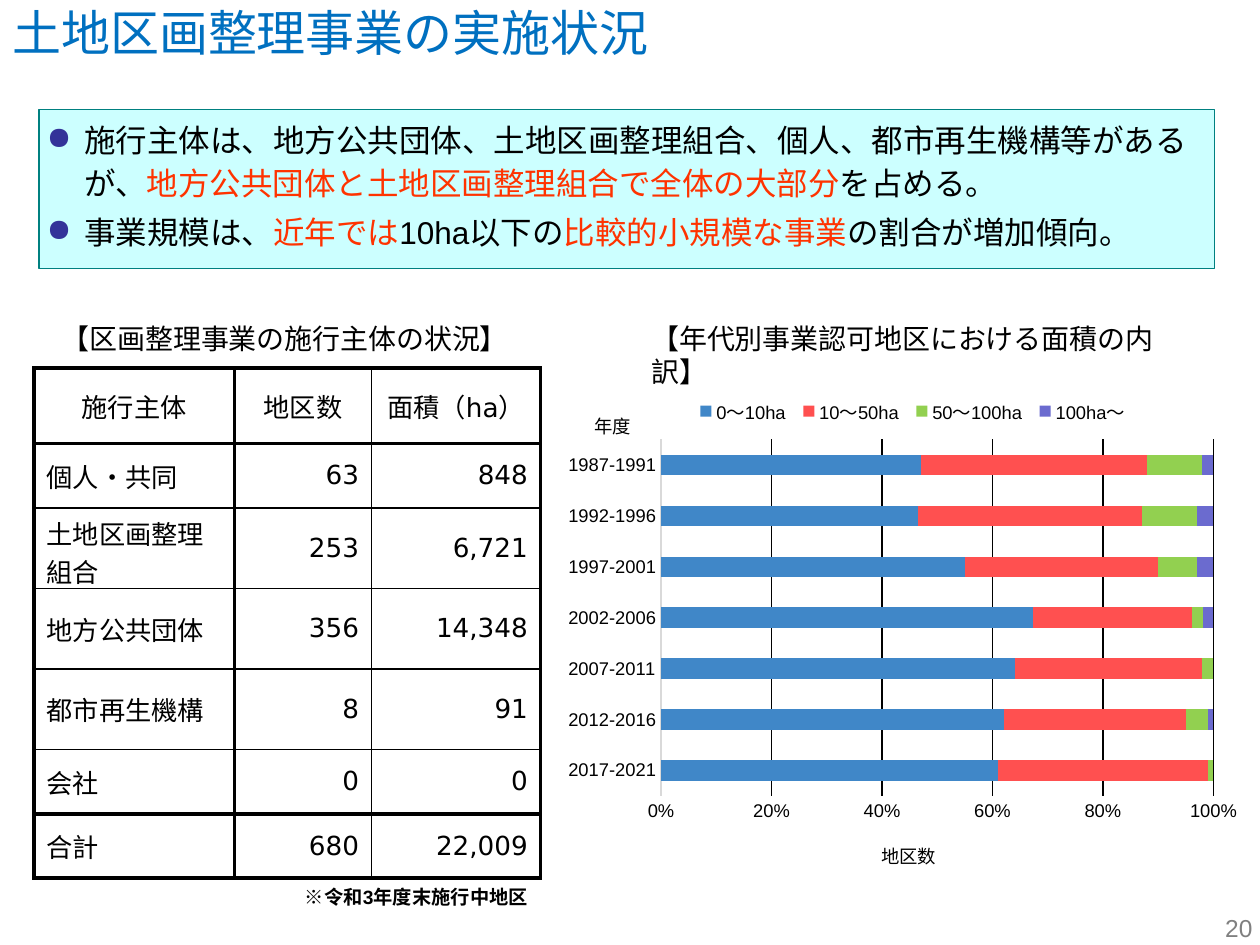
from dataclasses import dataclass
from typing import Optional

from lxml.etree import SubElement
from pptx import Presentation
from pptx.chart.data import CategoryChartData
from pptx.dml.color import RGBColor
from pptx.enum.chart import XL_CHART_TYPE as ChartType, XL_LEGEND_POSITION as LegendPosition
from pptx.enum.chart import XL_TICK_MARK as TickMark
from pptx.enum.shapes import MSO_SHAPE as Shape
from pptx.enum.text import MSO_ANCHOR as Anchor, MSO_AUTO_SIZE as AutoSize, PP_ALIGN as Align
from pptx.oxml import parse_xml
from pptx.oxml.ns import nsdecls, qn
from pptx.util import Inches, Pt

BLACK = RGBColor(0x00, 0x00, 0x00)
WHITE = RGBColor(0xFF, 0xFF, 0xFF)
TITLE_BLUE = RGBColor(0x00, 0x70, 0xC0)
ACCENT_RED = RGBColor(0xFF, 0x33, 0x00)
BULLET_BLUE = RGBColor(0x33, 0x33, 0x99)
PANEL_FILL = RGBColor(0xCC, 0xFF, 0xFF)
PANEL_LINE = RGBColor(0x00, 0x80, 0x80)
PAGE_GREY = RGBColor(0x80, 0x80, 0x80)
AXIS_GREY = RGBColor(0xD9, 0xD9, 0xD9)
LATIN, JAPANESE, TABLE_FONT = "Arial", "Noto Sans CJK JP", "DejaVu Sans"


@dataclass(frozen=True)
class Label:
    text: str
    left: float
    top: float
    width: float
    height: float
    size: float
    color: RGBColor = BLACK
    font: str = LATIN
    align: Align = Align.LEFT
    anchor: Anchor = Anchor.TOP
    bold: bool = False
    fill: Optional[RGBColor] = None
    grow: bool = False


@dataclass(frozen=True)
class Series:
    name: str
    values: tuple
    color: RGBColor


TITLE = Label("土地区画整理事業の実施状況", 0, -0.03, 7.27, 0.57, 28, TITLE_BLUE, JAPANESE,
              anchor=Anchor.MIDDLE)
TABLE_CAPTION = Label("【区画整理事業の施行主体の状況】", 0.39, 2.5, 3.78, 0.37, 16, fill=WHITE, grow=True)
CHART_CAPTION = Label("【年代別事業認可地区における面積の内訳】", 5.07, 2.5, 4.41, 0.37, 16, fill=WHITE, grow=True)
FOOTNOTE = Label("※令和3年度末施行中地区", 1.67, 6.98, 2.62, 0.29, 11, align=Align.RIGHT, bold=True, grow=True)
PAGE_NUMBER = Label("20", 7.71, 7.01, 2.33, 0.52, 14, PAGE_GREY, align=Align.RIGHT, anchor=Anchor.BOTTOM)

POINTS = (
    (("施行主体は、地方公共団体、土地区画整理組合、個人、都市再生機構等があるが、", BLACK),
     ("地方公共団体と土地区画整理組合で全体の大部分", ACCENT_RED), ("を占める。", BLACK)),
    (("事業規模は、", BLACK), ("近年では", ACCENT_RED), ("10ha以下の", BLACK),
     ("比較的小規模な事業", ACCENT_RED), ("の割合が増加傾向。", BLACK)),
)

ROWS = (
    ("施行主体", "地区数", "面積（ha）"),
    ("個人・共同", "63", "848"),
    ("土地区画整理組合", "253", "6,721"),
    ("地方公共団体", "356", "14,348"),
    ("都市再生機構", "8", "91"),
    ("会社", "0", "0"),
    ("合計", "680", "22,009"),
)
COLUMN_WIDTHS = (1.59, 1.09, 1.34)
ROW_HEIGHTS = (0.51, 0.51, 0.64, 0.64, 0.64, 0.51, 0.51)
THICK_COLUMN_EDGES = {0, 1, 3}
THICK_ROW_EDGES = {0, 1, 6, 7}

PERIODS = ("2017-2021", "2012-2016", "2007-2011", "2002-2006", "1997-2001", "1992-1996", "1987-1991")
AREA_BANDS = (
    Series("0～10ha", (61, 62, 64, 68, 55, 47, 47), RGBColor(0x40, 0x87, 0xC8)),
    Series("10～50ha", (38, 33, 34, 29, 35, 41, 41), RGBColor(0xFF, 0x50, 0x50)),
    Series("50～100ha", (1, 4, 2, 2, 7, 10, 10), RGBColor(0x92, 0xD0, 0x50)),
    Series("100ha～", (0, 1, 0, 2, 3, 3, 2), RGBColor(0x6B, 0x6B, 0xCF)),
)


def style_font(font, size: float, color: RGBColor, name: str, bold: bool = False) -> None:
    font.size, font.name, font.bold = Pt(size), name, bold
    font.color.rgb = color


def style_paragraph(para, size: float, color: RGBColor, name: str, bold: bool = False) -> None:
    style_font(para.font, size, color, name, bold)
    if name != TABLE_FONT:
        SubElement(para.font._element, qn("a:ea"), typeface=name)


def add_label(page, label: Label) -> None:
    frame = tuple(Inches(n) for n in (label.left, label.top, label.width, label.height))
    if label.fill is None:
        box = page.shapes.add_textbox(*frame)
    else:
        box = page.shapes.add_shape(Shape.RECTANGLE, *frame)
        box.shadow.inherit = False
        box.fill.solid()
        box.fill.fore_color.rgb = label.fill
        box.line.fill.background()
    text = box.text_frame
    text.word_wrap = True
    text.vertical_anchor = label.anchor
    text.auto_size = AutoSize.SHAPE_TO_FIT_TEXT if label.grow else AutoSize.NONE
    para = text.paragraphs[0]
    para.text, para.alignment = label.text, label.align
    style_paragraph(para, label.size, label.color, label.font, label.bold)


def add_summary(page) -> None:
    box = page.shapes.add_shape(Shape.RECTANGLE, Inches(0.31), Inches(0.87), Inches(9.33), Inches(1.26))
    box.shadow.inherit = False
    box.fill.solid()
    box.fill.fore_color.rgb = PANEL_FILL
    box.line.color.rgb, box.line.width = PANEL_LINE, Pt(0.75)
    text = box.text_frame
    text.word_wrap, text.vertical_anchor = True, Anchor.TOP
    text.margin_left, text.margin_right = Inches(0.06), Inches(0.02)
    text.margin_top = text.margin_bottom = Inches(0.05)
    for index, spans in enumerate(POINTS):
        para = text.add_paragraph() if index else text.paragraphs[0]
        para.alignment, para.line_spacing = Align.LEFT, 1.14
        if index:
            para.space_before = Pt(3.6)
        properties = para._p.get_or_add_pPr()
        properties.set("marL", str(Inches(0.3)))
        properties.set("indent", str(-Inches(0.3)))
        SubElement(SubElement(properties, qn("a:buClr")), qn("a:srgbClr"), val=str(BULLET_BLUE))
        SubElement(properties, qn("a:buChar"), char="●")
        style_paragraph(para, 18, BLACK, LATIN)
        for words, color in spans:
            span = para.add_run()
            span.text = words
            span.font.color.rgb = color


def set_borders(cell, row: int, column: int) -> None:
    edges = (("L", column in THICK_COLUMN_EDGES), ("R", column + 1 in THICK_COLUMN_EDGES),
             ("T", row in THICK_ROW_EDGES), ("B", row + 1 in THICK_ROW_EDGES))
    properties = cell._tc.get_or_add_tcPr()
    for index, (side, thick) in enumerate(edges):
        properties.insert(index, parse_xml(
            f'<a:ln{side} {nsdecls("a")} w="{Pt(2.25 if thick else 1)}"><a:solidFill>'
            f'<a:srgbClr val="{BLACK}"/></a:solidFill></a:ln{side}>'))


def add_operator_table(page) -> None:
    table = page.shapes.add_table(len(ROWS), len(COLUMN_WIDTHS), Inches(0.27), Inches(2.92),
                                  Inches(sum(COLUMN_WIDTHS)), Inches(sum(ROW_HEIGHTS))).table
    table.first_row = table.horz_banding = False
    for column, width in zip(table.columns, COLUMN_WIDTHS):
        column.width = Inches(width)
    for r, (height, values) in enumerate(zip(ROW_HEIGHTS, ROWS)):
        table.rows[r].height = Inches(height)
        for c, value in enumerate(values):
            cell = table.cell(r, c)
            cell.text, cell.vertical_anchor = value, Anchor.MIDDLE
            cell.fill.background()
            set_borders(cell, r, c)
            para = cell.text_frame.paragraphs[0]
            para.alignment = Align.CENTER if r == 0 else Align.RIGHT if c else Align.LEFT
            style_paragraph(para, 15, BLACK, TABLE_FONT)


def set_layout(element, x: float, y: float, size: tuple = (), inner: bool = False) -> None:
    for old in element.findall(qn("c:layout")):
        element.remove(old)
    parts = [("layoutTarget", "inner")] if inner else []
    parts += [("xMode", "edge"), ("yMode", "edge"), ("x", x), ("y", y), *zip("wh", size)]
    body = "".join(f'<c:{tag} val="{value}"/>' for tag, value in parts)
    layout = parse_xml(f'<c:layout {nsdecls("c")}><c:manualLayout>{body}</c:manualLayout></c:layout>')
    follower = element[0] if inner else element.find(qn("c:overlay"))
    follower.addprevious(layout)


def set_chart_title(title, words: str, x: float, y: float) -> None:
    para = title.text_frame.paragraphs[0]
    para.text = words
    style_paragraph(para, 10.5, BLACK, LATIN)
    set_layout(title._element, x, y)


def add_area_chart(page) -> None:
    data = CategoryChartData()
    data.categories = PERIODS
    for band in AREA_BANDS:
        data.add_series(band.name, band.values)
    chart = page.shapes.add_chart(ChartType.BAR_STACKED_100, Inches(4.47), Inches(2.68),
                                  Inches(5.55), Inches(4.49), data).chart
    style_font(chart.font, 10, BLACK, LATIN)
    plot = chart.plots[0]
    plot.gap_width, plot.overlap, plot.vary_by_categories = 150, 100, False
    for series, band in zip(plot.series, AREA_BANDS):
        series.format.fill.solid()
        series.format.fill.fore_color.rgb = band.color
    periods, shares = chart.category_axis, chart.value_axis
    for axis in (periods, shares):
        axis.major_tick_mark = axis.minor_tick_mark = TickMark.NONE
        style_font(axis.tick_labels.font, 10.5, BLACK, LATIN)
    periods.format.line.color.rgb, periods.format.line.width = AXIS_GREY, Pt(0.75)
    shares.format.line.fill.background()
    shares.minimum_scale, shares.maximum_scale, shares.major_unit = 0, 1, 0.2
    shares.tick_labels.number_format, shares.tick_labels.number_format_is_linked = "0%", False
    grid = shares.major_gridlines.format.line
    grid.color.rgb, grid.width = BLACK, Pt(0.75)
    chart.has_legend = True
    chart.legend.position, chart.legend.include_in_layout = LegendPosition.TOP, False
    style_font(chart.legend.font, 10.5, BLACK, LATIN)
    set_layout(chart.legend._element, 0.18, 0.1, (0.64, 0.06))
    set_chart_title(chart.chart_title, "年度", 0.04, 0.13)
    set_chart_title(shares.axis_title, "地区数", 0.45, 0.89)
    set_layout(chart._chartSpace.find(f".//{qn('c:plotArea')}"), 0.14, 0.18, (0.79, 0.63), inner=True)


def main() -> None:
    """Build the slide on the state of land readjustment projects."""
    deck = Presentation()
    deck.slide_width, deck.slide_height = Inches(10), Inches(7.5)
    page = deck.slides.add_slide(deck.slide_layouts[6])
    add_label(page, TITLE)
    add_summary(page)
    for label in (PAGE_NUMBER, TABLE_CAPTION, FOOTNOTE):
        add_label(page, label)
    add_operator_table(page)
    add_area_chart(page)
    add_label(page, CHART_CAPTION)
    deck.save("out.pptx")


if __name__ == "__main__":
    main()
